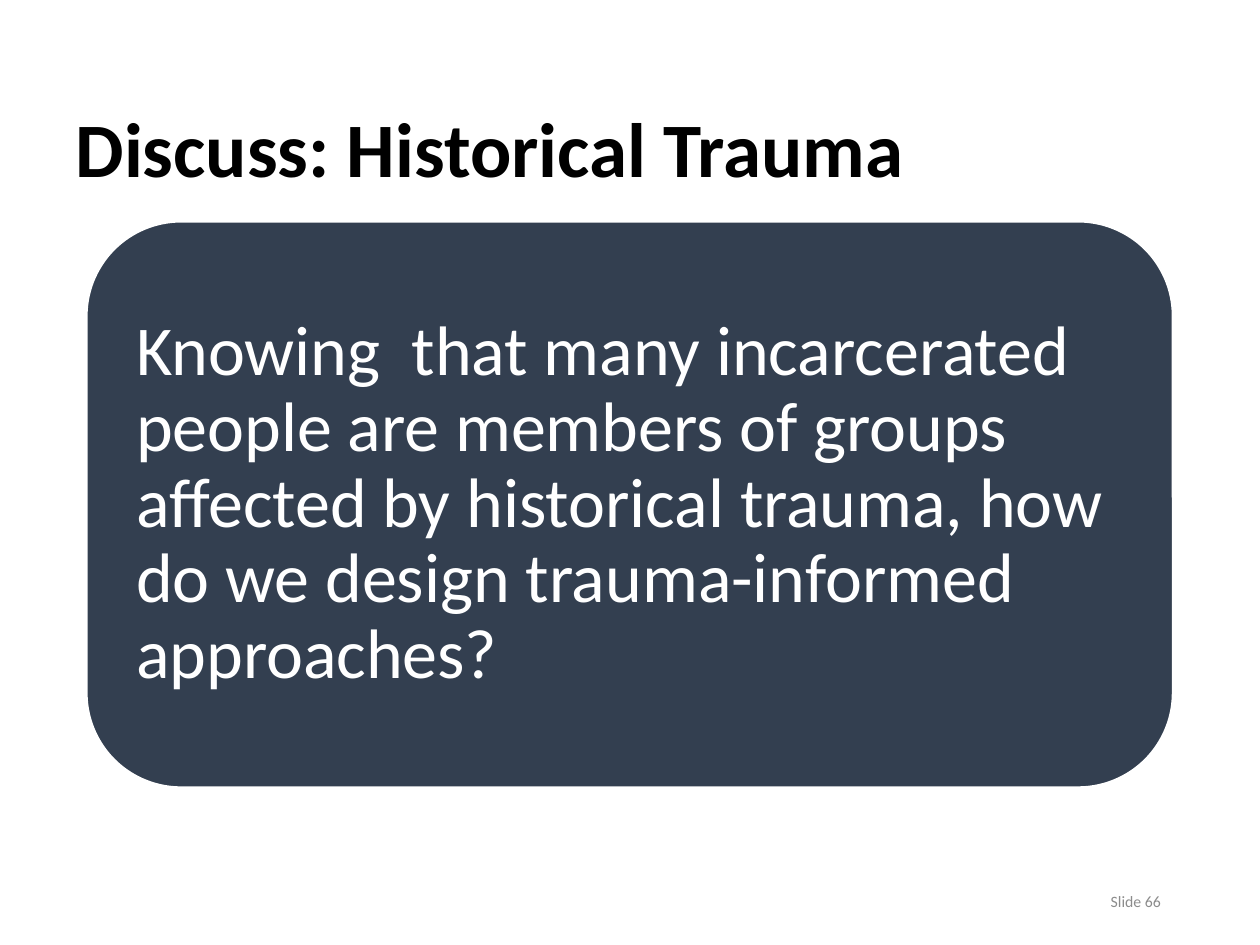
from dataclasses import dataclass

from pptx import Presentation
from pptx.dml.color import RGBColor as Rgb
from pptx.enum.shapes import MSO_SHAPE as Shape
from pptx.enum.text import MSO_ANCHOR as Anchor, MSO_AUTO_SIZE as AutoSize, PP_ALIGN as Align
from pptx.util import Cm, Pt


@dataclass(frozen=True)
class Theme:
    """Font, colours and type sizes of the slide."""
    font: str = "Calibri"
    panel: Rgb = Rgb(0x33, 0x3F, 0x50)
    white: Rgb = Rgb(0xFF, 0xFF, 0xFF)
    black: Rgb = Rgb(0, 0, 0)
    grey: Rgb = Rgb(0x8C, 0x8C, 0x8C)
    title_size: int = 44
    body_size: int = 40
    number_size: int = 9


@dataclass(frozen=True)
class Area:
    """A rectangle in centimetres."""
    left: float
    top: float
    width: float
    height: float

    def lengths(self) -> tuple[Cm, Cm, Cm, Cm]:
        """Return the four values as lengths."""
        return Cm(self.left), Cm(self.top), Cm(self.width), Cm(self.height)


THEME = Theme()
TITLE_AREA = Area(1.27, 1.9, 21.11, 2.13)
PANEL_AREA = Area(1.75, 4.47, 21.89, 11.4)
NUMBER_AREA = Area(17.93, 17.65, 5.72, 1.02)
QUESTION = ("Knowing  that many incarcerated people are members of groups affected by "
            "historical trauma, how do we design trauma-informed approaches?")


def write(box, text: str, size: int, color: Rgb, anchor: Anchor,
          align: Align = Align.LEFT, bold: bool = False):
    """Fill a shape with one formatted paragraph and return the paragraph."""
    frame = box.text_frame
    frame.word_wrap = True
    frame.vertical_anchor = anchor
    frame.text = text
    para = frame.paragraphs[0]
    para.alignment = align
    para.font.name = THEME.font
    para.font.size = Pt(size)
    para.font.bold = bold
    para.font.color.rgb = color
    return para


def add_title(page) -> None:
    """Place and format the title placeholder."""
    title = page.shapes.title
    title.left, title.top, title.width, title.height = TITLE_AREA.lengths()
    write(title, "Discuss: Historical Trauma", THEME.title_size, THEME.black,
          Anchor.TOP, bold=True)
    title.text_frame.auto_size = AutoSize.SHAPE_TO_FIT_TEXT


def add_question(page) -> None:
    """Draw the rounded panel holding the discussion question."""
    panel = page.shapes.add_shape(Shape.ROUNDED_RECTANGLE, *PANEL_AREA.lengths())
    panel.shadow.inherit = False
    panel.fill.solid()
    panel.fill.fore_color.rgb = THEME.panel
    panel.line.color.rgb = THEME.white
    panel.line.width = Pt(1)
    para = write(panel, QUESTION, THEME.body_size, THEME.white, Anchor.MIDDLE)
    para.line_spacing = 0.9
    frame = panel.text_frame
    # The rounded corners already inset the text area by about 0.54 cm.
    frame.margin_left = frame.margin_right = Cm(0.44)
    frame.margin_top = frame.margin_bottom = Cm(0.44)


def add_number(page) -> None:
    """Write the slide number label."""
    box = page.shapes.add_textbox(*NUMBER_AREA.lengths())
    write(box, "Slide 66", THEME.number_size, THEME.grey, Anchor.MIDDLE, Align.RIGHT)


def main() -> None:
    """Build and save the slide."""
    deck = Presentation()
    deck.slide_width, deck.slide_height = Cm(25.4), Cm(19.05)
    page = deck.slides.add_slide(deck.slide_layouts[5])
    add_question(page)
    add_title(page)
    add_number(page)
    deck.save("out.pptx")


if __name__ == "__main__":
    main()
